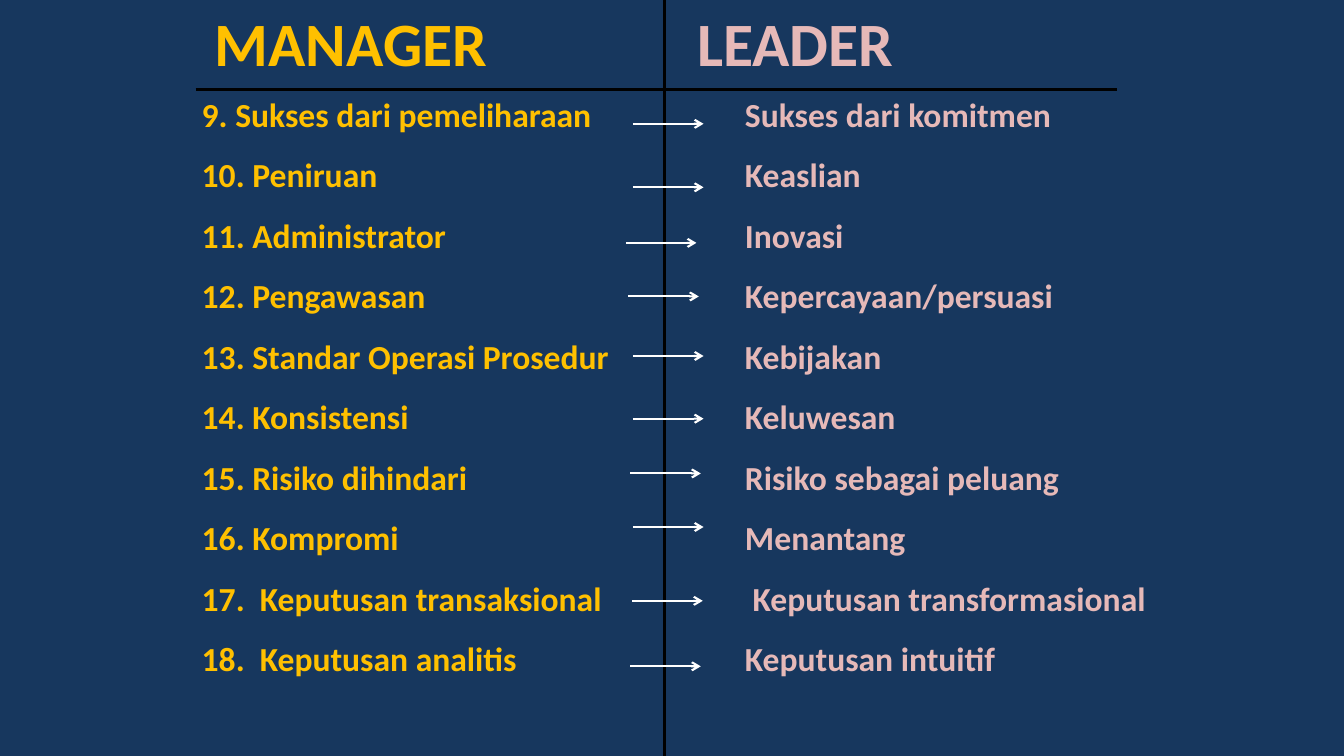
from typing import NamedTuple

import lxml.etree
import pptx
import pptx.dml.color
import pptx.enum.shapes
import pptx.enum.text
import pptx.oxml.ns
import pptx.util

Cm = pptx.util.Cm
Pt = pptx.util.Pt
RGBColor = pptx.dml.color.RGBColor
qn = pptx.oxml.ns.qn

NAVY = RGBColor(0x17, 0x37, 0x5E)
GOLD = RGBColor(0xFF, 0xC0, 0x00)
ROSE = RGBColor(0xE6, 0xB9, 0xB8)
BLACK = RGBColor(0, 0, 0)
WHITE = RGBColor(0xFF, 0xFF, 0xFF)

ARROW_LENGTH = 1.78


class Contrast(NamedTuple):
    manager: str
    leader: str
    arrow_left: float
    arrow_y: float


class Column(NamedTuple):
    heading: str
    heading_idx: int
    heading_left: float
    traits: list[str]
    traits_idx: int
    traits_left: float
    hanging: float
    color: RGBColor


CONTRASTS = [
    Contrast("9. Sukses dari pemeliharaan", "Sukses dari komitmen", 15.95, 3.12),
    Contrast("10. Peniruan", "Keaslian", 15.95, 4.72),
    Contrast("11. Administrator", "Inovasi", 15.77, 6.12),
    Contrast("12. Pengawasan", "Kepercayaan/persuasi", 15.83, 7.47),
    Contrast("13. Standar Operasi Prosedur", "Kebijakan", 15.95, 8.97),
    Contrast("14. Konsistensi", "Keluwesan", 15.95, 10.55),
    Contrast("15. Risiko dihindari", "Risiko sebagai peluang", 15.88, 11.93),
    Contrast("16. Kompromi", "Menantang", 15.95, 13.28),
    Contrast("17.  Keputusan transaksional", " Keputusan transformasional", 15.93, 15.14),
    Contrast("18.  Keputusan analitis", "Keputusan intuitif", 15.88, 16.79),
]

COLUMNS = [
    Column("MANAGER", 0, 5.16, [c.manager for c in CONTRASTS], 2, 4.83, 0, GOLD),
    Column("LEADER", 3, 17.32, [c.leader for c in CONTRASTS], 4, 18.52, 1.25, ROSE),
]


def fill_placeholder(holder, lines: list[str], left: float, top: float, width: float,
                     height: float, size: int, color: RGBColor,
                     spacing: float = 1.0, hanging: float = 0) -> None:
    holder.left, holder.top = Cm(left), Cm(top)
    holder.width, holder.height = Cm(width), Cm(height)
    frame = holder.text_frame
    frame.text = "\n".join(lines)
    frame.word_wrap = True
    frame.auto_size = pptx.enum.text.MSO_AUTO_SIZE.NONE
    frame.vertical_anchor = pptx.enum.text.MSO_ANCHOR.TOP
    for paragraph in frame.paragraphs:
        paragraph.alignment = pptx.enum.text.PP_ALIGN.LEFT
        paragraph.line_spacing = spacing
        paragraph.space_before = Pt(0)
        properties = paragraph._p.get_or_add_pPr()
        properties.set("marL", str(Cm(hanging)))
        properties.set("indent", str(-Cm(hanging)))
        lxml.etree.SubElement(properties, qn("a:buNone"))
        paragraph.font.name = "Calibri"
        paragraph.font.size = Pt(size)
        paragraph.font.bold = True
        paragraph.font.color.rgb = color


def outline_text(holder, color: RGBColor, width: float) -> None:
    for run in holder.text_frame.paragraphs[0].runs:
        outline = lxml.etree.Element(qn("a:ln"), w=str(Pt(width)))
        fill = lxml.etree.SubElement(outline, qn("a:solidFill"))
        lxml.etree.SubElement(fill, qn("a:srgbClr"), val=str(color))
        run._r.get_or_add_rPr().insert(0, outline)


def draw_line(slide, x1: float, y1: float, x2: float, y2: float,
              color: RGBColor, width: float, arrow: bool = False) -> None:
    line = slide.shapes.add_connector(
        pptx.enum.shapes.MSO_CONNECTOR.STRAIGHT, Cm(x1), Cm(y1), Cm(x2), Cm(y2))
    line.line.color.rgb = color
    line.line.width = Pt(width)
    if arrow:
        lxml.etree.SubElement(line.line._get_or_add_ln(), qn("a:tailEnd"), type="arrow")
    lxml.etree.SubElement(line._element.spPr, qn("a:effectLst"))


def main() -> None:
    deck = pptx.Presentation()
    deck.slide_width, deck.slide_height = Cm(33.87), Cm(19.05)
    slide = deck.slides.add_slide(deck.slide_layouts.get_by_name("Comparison"))
    slide.background.fill.solid()
    slide.background.fill.fore_color.rgb = NAVY
    holders = {holder.placeholder_format.idx: holder for holder in slide.placeholders}

    for column in COLUMNS:
        heading = holders.pop(column.heading_idx)
        fill_placeholder(heading, [column.heading], column.heading_left, 0,
                         8.53, 2.18, 44, column.color)
        outline_text(heading, WHITE, 1)
        fill_placeholder(holders.pop(column.traits_idx), column.traits,
                         column.traits_left, 1.73, 11.71, 15.49, 24, column.color,
                         spacing=1.5, hanging=column.hanging)
    for unused in holders.values():
        unused._element.getparent().remove(unused._element)

    draw_line(slide, 16.74, 0, 16.74, 19.05, BLACK, 2.25)
    draw_line(slide, 4.93, 2.26, 28.14, 2.26, BLACK, 2.25)
    for contrast in CONTRASTS:
        draw_line(slide, contrast.arrow_left, contrast.arrow_y,
                  contrast.arrow_left + ARROW_LENGTH, contrast.arrow_y,
                  WHITE, 1.5, arrow=True)

    deck.save("out.pptx")


if __name__ == "__main__":
    main()
